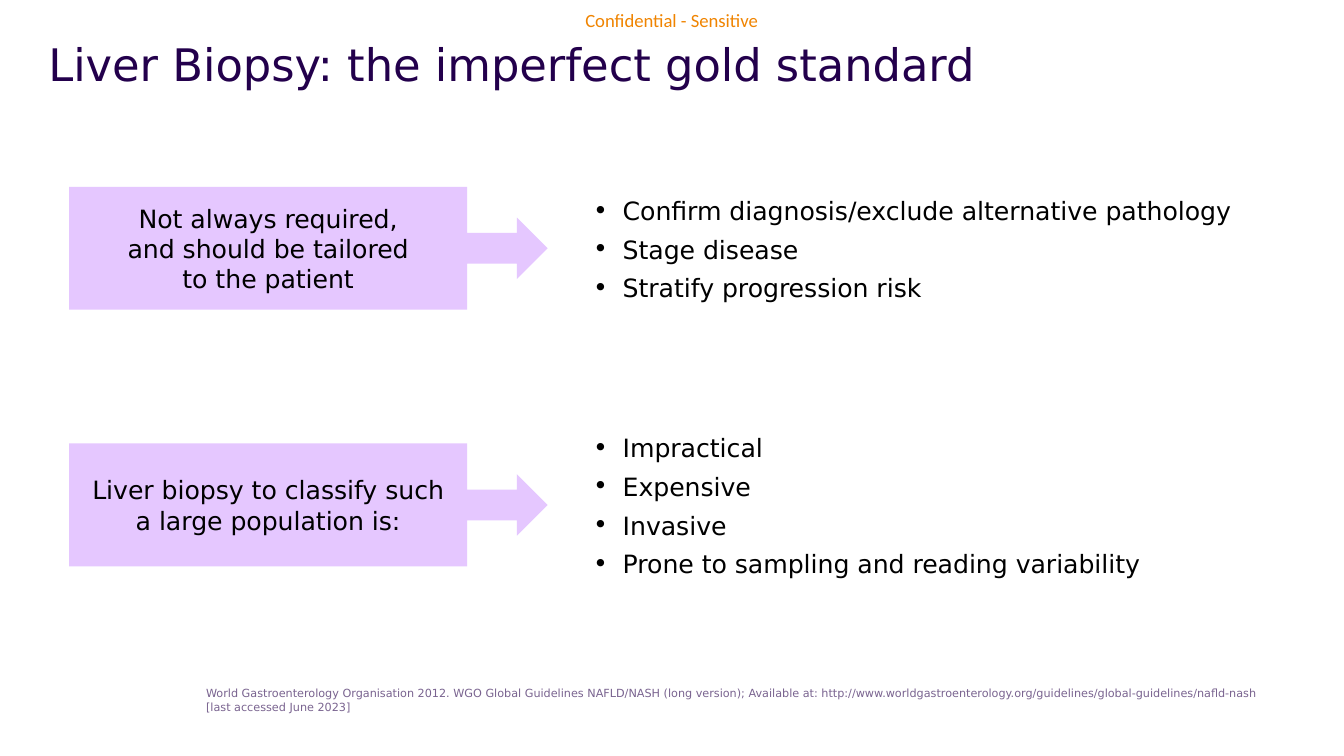
"""Build the liver biopsy slide: two callouts, each leading to a bullet list."""
from lxml import etree
from pptx import Presentation
from pptx.dml.color import RGBColor
from pptx.enum.shapes import MSO_SHAPE
from pptx.enum.text import MSO_ANCHOR, MSO_AUTO_SIZE, PP_ALIGN
from pptx.oxml.ns import qn
from pptx.util import Pt

PX = 4572
CALLOUT = MSO_SHAPE.RIGHT_ARROW_CALLOUT
TOP, MIDDLE = MSO_ANCHOR.TOP, MSO_ANCHOR.MIDDLE
LEFT, CENTER = PP_ALIGN.LEFT, PP_ALIGN.CENTER
FIXED = MSO_AUTO_SIZE.NONE
SANS = "DejaVu Sans"
BODY = {"name": SANS, "size": Pt(13.5), "color": "000000"}
NO_INSETS = {"margin_left": 0, "margin_top": 0, "margin_right": 0, "margin_bottom": 0}


def color(hex_text):
    return RGBColor.from_string(hex_text)


def write(frame, lines, font, align=LEFT, bullet=None, **frame_format):
    for name, value in {"word_wrap": True, "auto_size": FIXED, **frame_format}.items():
        setattr(frame, name, value)
    frame.text = "\n".join(lines)
    for para in frame.paragraphs:
        para.alignment = align
        if bullet:
            para.level = 1
            properties = para._p.get_or_add_pPr()
            properties.set("marL", str(60 * PX))
            properties.set("indent", str(-44 * PX))
            etree.SubElement(properties, qn("a:buFont")).set("typeface", SANS)
            etree.SubElement(properties, qn("a:buChar")).set("char", bullet)
            para.space_after = Pt(4.5)
        for span in para.runs:
            for name, value in font.items():
                if name == "color":
                    span.font.color.rgb = color(value)
                else:
                    setattr(span.font, name, value)


deck = Presentation()
deck.slide_width, deck.slide_height = 2000 * PX, 1125 * PX
page = deck.slides.add_slide(deck.slide_layouts[5])

title = page.shapes.title
title.left, title.top, title.width, title.height = 72 * PX, 64 * PX, 1856 * PX, 158 * PX
write(title.text_frame, ["Liver Biopsy: the imperfect gold standard"],
      {"name": SANS, "size": Pt(24), "color": "23004C"},
      vertical_anchor=TOP, **NO_INSETS)
title.text_frame.paragraphs[0].line_spacing = 0.9

marking = page.shapes.add_textbox(871 * PX, 13 * PX, 264 * PX, 34 * PX)
write(marking.text_frame, ["Confidential - Sensitive"],
      {"name": "Calibri", "size": Pt(10), "color": "F08400"},
      **{**NO_INSETS, "word_wrap": False})

reference = page.shapes.add_textbox(287 * PX, 1012 * PX, 1604 * PX, 60 * PX)
write(reference.text_frame,
      ["World Gastroenterology Organisation 2012. WGO Global Guidelines NAFLD/NASH "
       "(long version); Available at: http://www.worldgastroenterology.org/guidelines/"
       "global-guidelines/nafld-nash [last accessed June 2023]"],
      {"name": SANS, "size": Pt(6), "color": "7A6490"})

rows = [
    (278, "Not always required,\vand should be tailored\vto the patient", (281, 1094, 184),
     ["Confirm diagnosis/exclude alternative pathology", "Stage disease",
      "Stratify progression risk"]),
    (660, "Liver biopsy to classify such a large population is:", (634, 990, 244),
     ["Impractical", "Expensive", "Invasive",
      "Prone to sampling and reading variability"]),
]
for callout_top, statement, (list_top, list_width, list_height), points in rows:
    callout = page.shapes.add_shape(CALLOUT, 103 * PX, callout_top * PX, 712 * PX, 183 * PX)
    for index, value in enumerate((0.25, 0.25, 0.25, 0.832)):
        callout.adjustments[index] = value
    callout.shadow.inherit = False
    callout.fill.solid()
    callout.fill.fore_color.rgb = color("E5C7FF")
    callout.line.fill.background()
    write(callout.text_frame, [statement], BODY, CENTER, vertical_anchor=MIDDLE)

    box = page.shapes.add_textbox(847 * PX, list_top * PX, list_width * PX, list_height * PX)
    write(box.text_frame, points, BODY, bullet="•")

deck.save("out.pptx")
